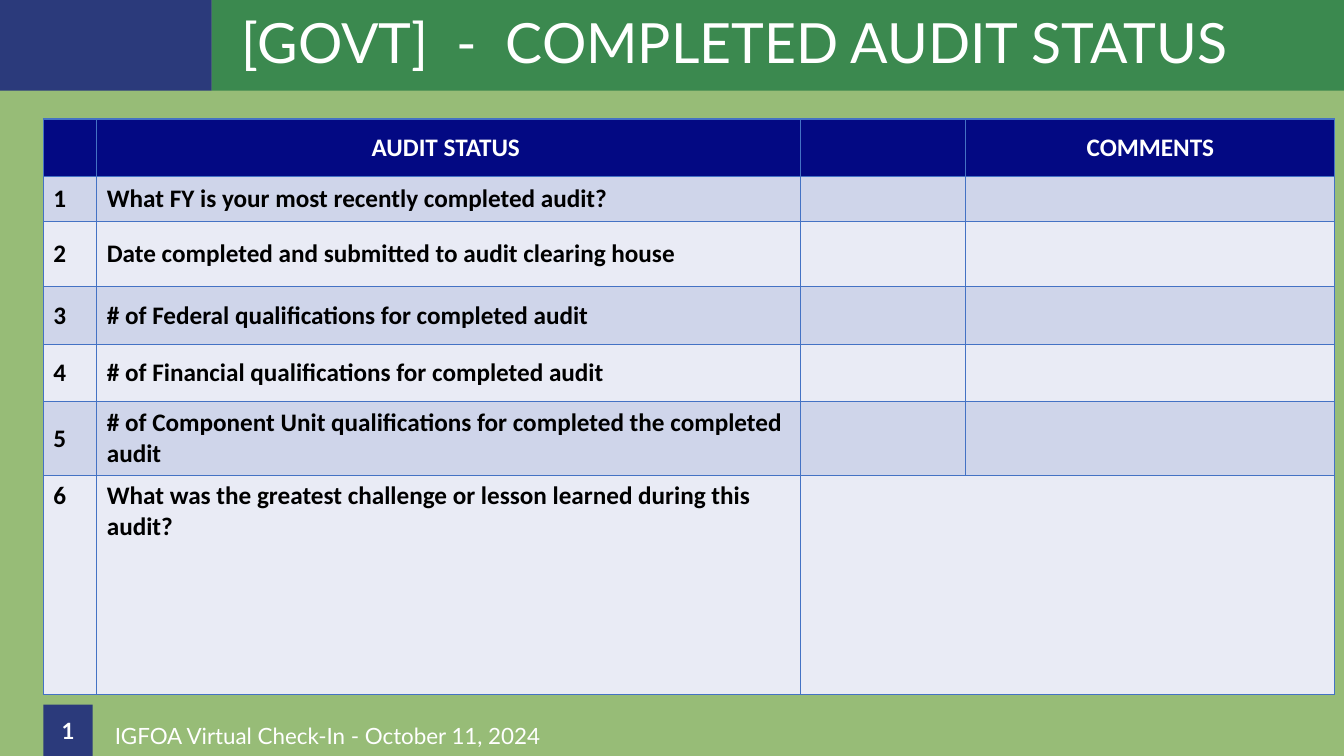
from lxml import etree
from pptx import Presentation, util as u
from pptx.dml.color import RGBColor
from pptx.enum import shapes, text
from pptx.oxml import ns

PX = 9144  # 100 px to the inch
NAVY, GREEN, WHITE = "2B3A7B", "3B894F", "FFFFFF"
HEAD, BANDS, EDGE = "030983", ("E9EBF5", "CFD5EA"), "4472C4"
COLS = (53, 698, 164, 366)
ROWS = (57, 45, 64, 58, 56, 74, 217)
ASKS = (
    "What FY is your most recently completed audit?",
    "Date completed and submitted to audit clearing house",
    "# of Federal qualifications for completed audit",
    "# of Financial qualifications for completed audit",
    "# of Component Unit qualifications for completed the completed audit",
    "What was the greatest challenge or lesson learned during this audit?",
)


def px(*vals):
    return [u.Emu(v * PX) for v in vals]


def paint(fill, hue):
    fill.solid()
    fill.fore_color.rgb = RGBColor.from_string(hue)


def style(para, size, face="Lato", hue=WHITE, bold=False, center=False):
    font = para.font
    font.size, font.name, font.bold = u.Pt(size), face, bold
    font.color.rgb = RGBColor.from_string(hue)
    para.alignment = text.PP_ALIGN.CENTER if center else text.PP_ALIGN.LEFT


def block(slide, box, hue):
    rect = slide.shapes.add_shape(shapes.MSO_SHAPE.RECTANGLE, *px(*box))
    rect.shadow.inherit = False
    paint(rect.fill, hue)
    rect.line.fill.background()
    return rect


def header(slide, box):
    x, y, w, h = box
    side = 210
    block(slide, (x, y, side, h), NAVY)
    title = slide.shapes.title
    title.left, title.top, title.width, title.height = px(x + side, y, w - side, h)
    paint(title.fill, GREEN)
    frame = title.text_frame
    frame.text = "[GOVT]  -  COMPLETED AUDIT STATUS"
    frame.auto_size = text.MSO_AUTO_SIZE.NONE
    frame.vertical_anchor = text.MSO_ANCHOR.MIDDLE
    frame.margin_left, frame.margin_right, frame.margin_top, frame.margin_bottom = px(30, 10, 5, 5)
    para = frame.paragraphs[0]
    para.line_spacing = 0.9
    style(para, 39.6)


def border(cell):
    props = cell._tc.get_or_add_tcPr()
    for side in ("a:lnL", "a:lnR", "a:lnT", "a:lnB"):
        line = etree.SubElement(props, ns.qn(side), w=str(u.Pt(1)))
        fill = etree.SubElement(line, ns.qn("a:solidFill"))
        etree.SubElement(fill, ns.qn("a:srgbClr"), val=EDGE)


def audit(slide, x, y):
    size = px(x, y, sum(COLS), sum(ROWS))
    table = slide.shapes.add_table(len(ROWS), len(COLS), *size).table
    for col, wide in zip(table.columns, COLS):
        col.width = u.Emu(wide * PX)
    for row, high in zip(table.rows, ROWS):
        row.height = u.Emu(high * PX)

    data = [("", "AUDIT STATUS ", "", "COMMENTS")]
    data += [(str(n), ask, "", "") for n, ask in enumerate(ASKS, 1)]
    last = len(data) - 1
    for r, words in enumerate(data):
        for c, word in enumerate(words):
            cell = table.cell(r, c)
            border(cell)
            paint(cell.fill, BANDS[r % 2] if r else HEAD)
            cell.text = word
            cell.vertical_anchor = text.MSO_ANCHOR.TOP if r == last else text.MSO_ANCHOR.MIDDLE
            hue = "000000" if r else WHITE
            style(cell.text_frame.paragraphs[0], 18, "Calibri", hue, True, r == 0)
    table.cell(last, 2).merge(table.cell(last, 3))


def footer(slide, x, y):
    # Event name
    note = slide.shapes.add_textbox(*px(x + 61, y + 11, 543, 40)).text_frame
    note.word_wrap = True
    note.vertical_anchor = text.MSO_ANCHOR.MIDDLE
    note.text = "IGFOA Virtual Check-In - October 11, 2024"
    style(note.paragraphs[0], 16)
    # Page number
    page = block(slide, (x, y, 49, 51), NAVY).text_frame
    page.vertical_anchor = text.MSO_ANCHOR.MIDDLE
    page.text = "1"
    style(page.paragraphs[0], 16, bold=True, center=True)


def main():
    deck = Presentation()
    deck.slide_width, deck.slide_height = px(1333, 750)
    slide = deck.slides.add_slide(deck.slide_layouts[5])
    paint(slide.background.fill, "97BC77")
    header(slide, (0, 0, 1333, 90))
    audit(slide, 43, 118)
    footer(slide, 43, 699)
    deck.save("out.pptx")


if __name__ == "__main__":
    main()
